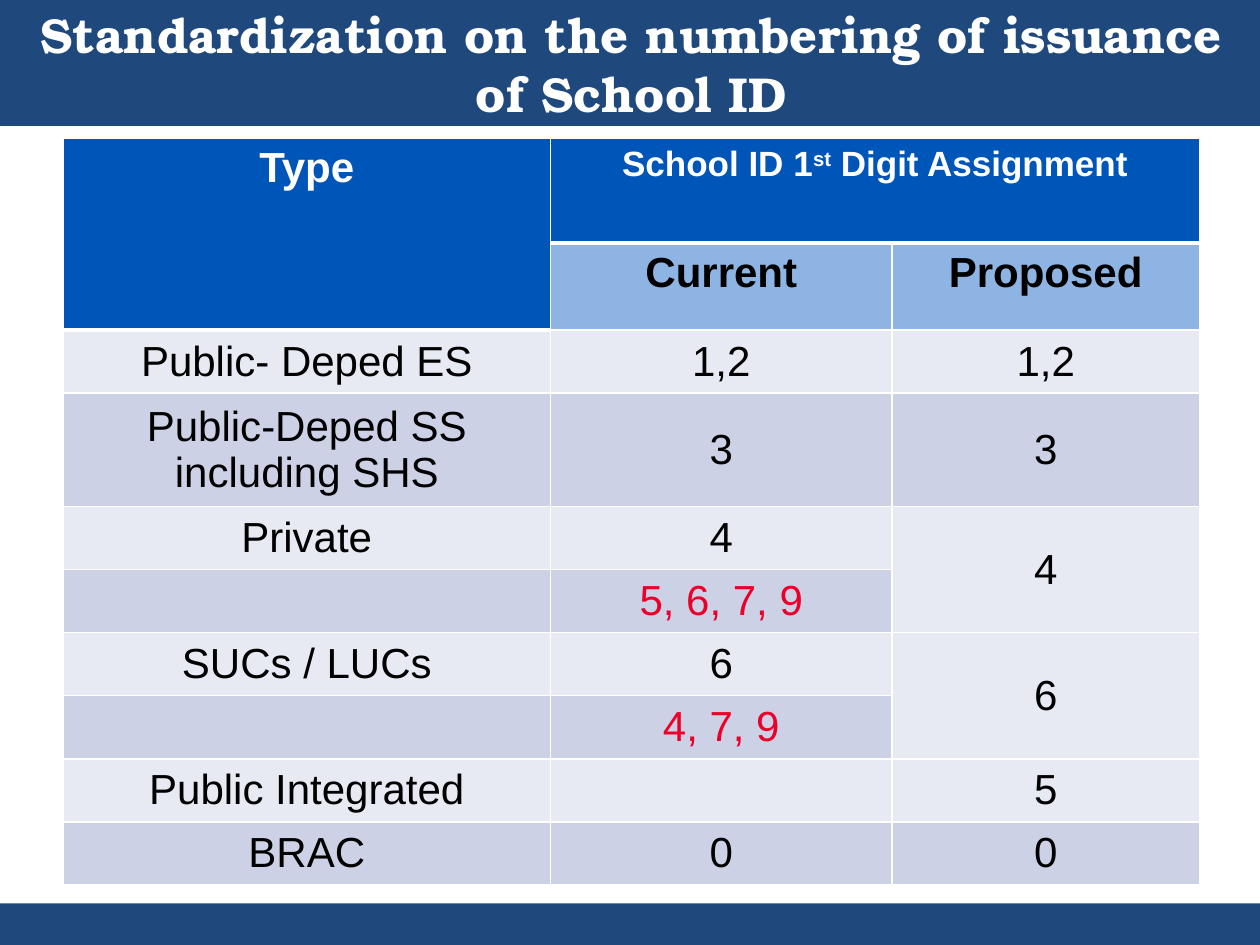
from lxml.etree import SubElement
from pptx import Presentation
from pptx.dml.color import RGBColor
from pptx.enum.shapes import MSO_SHAPE
from pptx.enum.text import MSO_ANCHOR, MSO_AUTO_SIZE, PP_ALIGN
from pptx.oxml.ns import qn
from pptx.util import Inches, Pt

NAVY = RGBColor(0x1F, 0x49, 0x7D)
BLUE = RGBColor(0x00, 0x55, 0xB8)
SKY = RGBColor(0x8E, 0xB4, 0xE3)
LIGHT = RGBColor(0xE7, 0xE9, 0xF3)
LILAC = RGBColor(0xCC, 0xD1, 0xE6)
RED = RGBColor(0xEB, 0x00, 0x29)
BLACK = RGBColor(0, 0, 0)
WHITE = RGBColor(0xFF, 0xFF, 0xFF)

TITLE = "Standardization on the numbering of issuance of School ID"
BARS = [(0, 1), (7.17, 0.33)]  # top, height
ROWS = [
    ("Type", ("School ID 1", "st", " Digit Assignment"), ""),
    ("", "Current", "Proposed"),
    ("Public- Deped ES", "1,2", "1,2"),
    ("Public-Deped SS including SHS", "3", "3"),
    ("Private", "4", "4"),
    ("", "5, 6, 7, 9", ""),
    ("SUCs / LUCs", "6", "6"),
    ("", "4, 7, 9", ""),
    ("Public Integrated", "", "5"),
    ("BRAC", "0", "0"),
]
MERGES = [((0, 0), (1, 0)), ((0, 1), (0, 2)), ((4, 2), (5, 2)), ((6, 2), (7, 2))]
IRREGULAR = {(5, 1), (7, 1)}  # digits used outside their type
COL_WIDTHS = [3.87, 2.71, 2.44]
ROW_HEIGHTS = [0.83, 0.69, 0.5, 0.9] + [0.5] * 6


def write(tf, text, size=24, font="Arial", color=BLACK, bold=False):
    """Write centred text; in a tuple every second part is superscript."""
    p = tf.paragraphs[0]
    p.alignment = PP_ALIGN.CENTER
    for i, part in enumerate((text,) if isinstance(text, str) else text):
        r = p.add_run()
        r.text = part
        r.font.size = Pt(size)
        r.font.name = font
        r.font.bold = bold
        r.font.color.rgb = color
        if i % 2:
            r.font._element.set("baseline", "30000")


def set_borders(cell, bottom):
    tc_pr = cell._tc.get_or_add_tcPr()
    for side, width in (("L", 1), ("R", 1), ("T", 1), ("B", bottom)):
        ln = SubElement(tc_pr, qn(f"a:ln{side}"), w=str(Pt(width)))
        fill = SubElement(ln, qn("a:solidFill"))
        SubElement(fill, qn("a:srgbClr"), val=str(WHITE))


def format_cell(cell, row, col):
    is_type = row < 2 and col == 0
    is_head = row == 0 or is_type
    set_borders(cell, 3 if is_head else 1)
    cell.fill.solid()
    if is_head:
        cell.fill.fore_color.rgb = BLUE
    elif row == 1:
        cell.fill.fore_color.rgb = SKY
    else:
        cell.fill.fore_color.rgb = LILAC if row % 2 else LIGHT
    cell.margin_left = cell.margin_right = Inches(0.07)
    cell.margin_top = cell.margin_bottom = Inches(0.05)
    cell.vertical_anchor = MSO_ANCHOR.TOP if row < 2 else MSO_ANCHOR.MIDDLE
    if ROWS[row][col]:
        color = WHITE if is_head else RED if (row, col) in IRREGULAR else BLACK
        write(cell.text_frame, ROWS[row][col], color=color, bold=row < 2,
              size=20 if is_head and not is_type else 24)


prs = Presentation()
prs.slide_width, prs.slide_height = Inches(10), Inches(7.5)
s = prs.slides.add_slide(prs.slide_layouts[5])

for top, height in BARS:
    bar = s.shapes.add_shape(MSO_SHAPE.RECTANGLE, 0, Inches(top), Inches(10), Inches(height))
    bar.shadow.inherit = False
    bar.fill.solid()
    bar.fill.fore_color.rgb = NAVY
    bar.line.fill.background()

title = s.shapes.title
s.shapes.element.append(title.element)  # in front of the bars
title.left, title.top = Inches(0.13), Inches(-0.02)
title.width, title.height = Inches(9.76), Inches(1.04)
tf = title.text_frame
tf.word_wrap = True
tf.auto_size = MSO_AUTO_SIZE.SHAPE_TO_FIT_TEXT
tf.vertical_anchor = MSO_ANCHOR.MIDDLE
write(tf, TITLE, size=28, font="TeX Gyre Bonum", color=WHITE, bold=True)

table = s.shapes.add_table(len(ROWS), len(COL_WIDTHS), Inches(0.5), Inches(1.1),
                           Inches(sum(COL_WIDTHS)), Inches(sum(ROW_HEIGHTS))).table
for column, width in zip(table.columns, COL_WIDTHS):
    column.width = Inches(width)
for row, height in zip(table.rows, ROW_HEIGHTS):
    row.height = Inches(height)
for start, end in MERGES:
    table.cell(*start).merge(table.cell(*end))
for i in range(len(ROWS)):
    for j in range(len(COL_WIDTHS)):
        format_cell(table.cell(i, j), i, j)

prs.save("out.pptx")
